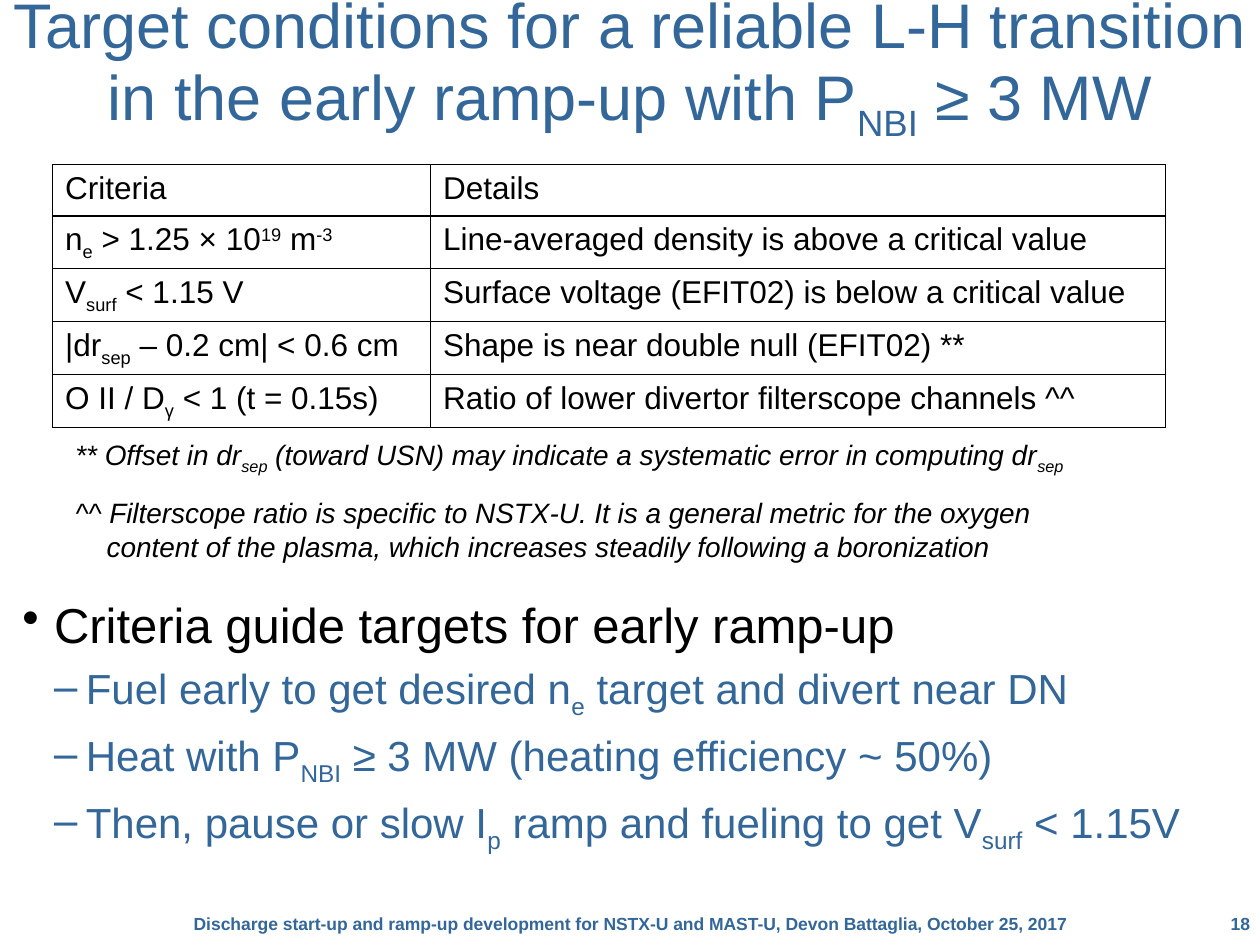
from pptx import Presentation
from pptx.dml.color import RGBColor
from pptx.enum.text import MSO_ANCHOR, MSO_AUTO_SIZE, PP_ALIGN
from pptx.oxml import parse_xml
from pptx.oxml.ns import nsdecls
from pptx.util import Cm, Pt

COLORS = {"text": "000000", "accent": "336699", "border": "000000"}

CRITERIA = [
    ("Criteria", "Details"),
    ("n_e_ > 1.25 × 10_^19_ m_^-3_", "Line-averaged density is above a critical value"),
    ("V_surf_ < 1.15 V", "Surface voltage (EFIT02) is below a critical value"),
    ("|dr_sep_ – 0.2 cm| < 0.6 cm", "Shape is near double null (EFIT02) **"),
    ("O II / D_γ_ < 1 (t = 0.15s)", "Ratio of lower divertor filterscope channels ^^"),
]
FOOTNOTES = [
    ("** Offset in dr_sep_ (toward USN) may indicate a systematic error in computing dr_sep_", 0, 0),
    ("^^ Filterscope ratio is specific to NSTX-U. It is a general metric for the oxygen", 11.5, 0),
    ("content of the plasma, which increases steadily following a boronization", 0, 0.63),
]
TARGETS = [
    "Fuel early to get desired n_e_ target and divert near DN",
    "Heat with P_NBI_ ≥ 3 MW (heating efficiency ~ 50%)",
    "Then, pause or slow I_p_ ramp and fueling to get V_surf_ < 1.15V",
]


class SlideBuilder:
    """Holds the style and current page; text marks subscripts as _x_ and superscripts as _^x_."""

    font_name = "Arial"

    def __init__(self, deck):
        self.page = deck.slides.add_slide(deck.slide_layouts[5])

    def add_spans(self, para, text, size, color="text", **font_values):
        values = {"name": self.font_name, "size": Pt(size), "bold": False, **font_values}
        for index, piece in enumerate(text.split("_")):
            if not piece:
                continue
            raised = index % 2 == 1 and piece.startswith("^")
            span = para.add_run()
            span.text = piece[1:] if raised else piece
            for key, value in values.items():
                setattr(span.font, key, value)
            span.font.color.rgb = RGBColor.from_string(COLORS[color])
            if index % 2:
                span._r.get_or_add_rPr().set("baseline", "30000" if raised else "-25000")

    def format_frame(self, frame, **values):
        values = {"word_wrap": True, "auto_size": MSO_AUTO_SIZE.NONE, **values}
        for key, value in values.items():
            setattr(frame, key, value)

    def place(self, shape, left, top, width, height):
        for key, value in zip(("left", "top", "width", "height"), (left, top, width, height)):
            setattr(shape, key, Cm(value))

    def title(self, text, *bounds):
        box = self.page.shapes.title
        self.place(box, *bounds)
        inset = Cm(0.13)
        self.format_frame(box.text_frame, vertical_anchor=MSO_ANCHOR.MIDDLE, margin_left=inset,
                          margin_right=inset, margin_top=inset, margin_bottom=inset)
        para = box.text_frame.paragraphs[0]
        para.alignment = PP_ALIGN.CENTER
        para.line_spacing = 0.85
        self.add_spans(para, text, 36, "accent")

    def text_box(self, *bounds, **frame_values):
        box = self.page.shapes.add_textbox(*map(Cm, bounds))
        self.format_frame(box.text_frame, **frame_values)
        return box.text_frame

    def footer(self, text, alignment, *bounds):
        frame = self.text_box(*bounds, margin_left=0, margin_right=0)
        para = frame.paragraphs[0]
        para.alignment = alignment
        self.add_spans(para, text, 10, "accent", bold=True)

    def footnotes(self, notes, *bounds):
        frame = self.text_box(*bounds)
        for index, (text, space, indent) in enumerate(notes):
            para = frame.add_paragraph() if index else frame.paragraphs[0]
            para.space_before = Pt(space)
            para._p.get_or_add_pPr().set("marL", str(Cm(indent)))
            self.add_spans(para, text, 16, italic=True)

    def bullets(self, heading, items, *bounds):
        frame = self.text_box(*bounds)
        self.bullet(frame.paragraphs[0], heading, 0, "•", 28, "text")
        for item in items:
            para = frame.add_paragraph()
            self.bullet(para, item, 1, "–", 24, "accent")
            para.space_before = Pt(5.5)

    def bullet(self, para, text, level, mark, size, color):
        para.level = level
        step = Cm(0.64)
        properties = para._p.get_or_add_pPr()
        properties.set("marL", str(step * (level + 1)))
        properties.set("indent", str(-step))
        properties.append(parse_xml(f'<a:buChar {nsdecls("a")} char="{mark}"/>'))
        self.add_spans(para, text, size, color)

    def table(self, rows, widths, row_height, left, top):
        frame = self.page.shapes.add_table(len(rows), len(widths), Cm(left), Cm(top),
                                           Cm(sum(widths)), Cm(row_height * len(rows)))
        grid = frame.table
        grid.first_row = grid.horz_banding = False
        for column, width in zip(grid.columns, widths):
            column.width = Cm(width)
        for row, texts in zip(grid.rows, rows):
            row.height = Cm(row_height)
            for cell, text in zip(row.cells, texts):
                self.border(cell)
                cell.fill.background()
                self.add_spans(cell.text_frame.paragraphs[0], text, 18)

    def border(self, cell):
        properties = cell._tc.get_or_add_tcPr()
        for side in "LRTB":
            properties.append(parse_xml(
                f'<a:ln{side} {nsdecls("a")} w="{Pt(1)}"><a:solidFill>'
                f'<a:srgbClr val="{COLORS["border"]}"/></a:solidFill></a:ln{side}>'))


def main():
    deck = Presentation()
    deck.slide_width, deck.slide_height = Cm(25.4), Cm(19.05)
    slide = SlideBuilder(deck)
    slide.footer("18", PP_ALIGN.RIGHT, 23.5, 18.29, 1.7, 0.69)
    slide.footer("Discharge start-up and ramp-up development for NSTX-U and MAST-U, "
                 "Devon Battaglia, October 25, 2017", PP_ALIGN.CENTER, 2.54, 18.29, 20.32, 0.69)
    slide.table(CRITERIA, (7.62, 14.81), 1.03, 1.06, 3.32)
    slide.title("Target conditions for a reliable L-H transition in the early ramp-up "
                "with P_NBI_ ≥ 3 MW", 0, 0, 25.4, 2.67)
    slide.footnotes(FOOTNOTES, 1.27, 8.69, 21.79, 2.74)
    slide.bullets("Criteria guide targets for early ramp-up", TARGETS, 0.2, 11.86, 24.33, 5.92)
    deck.save("out.pptx")


if __name__ == "__main__":
    main()
